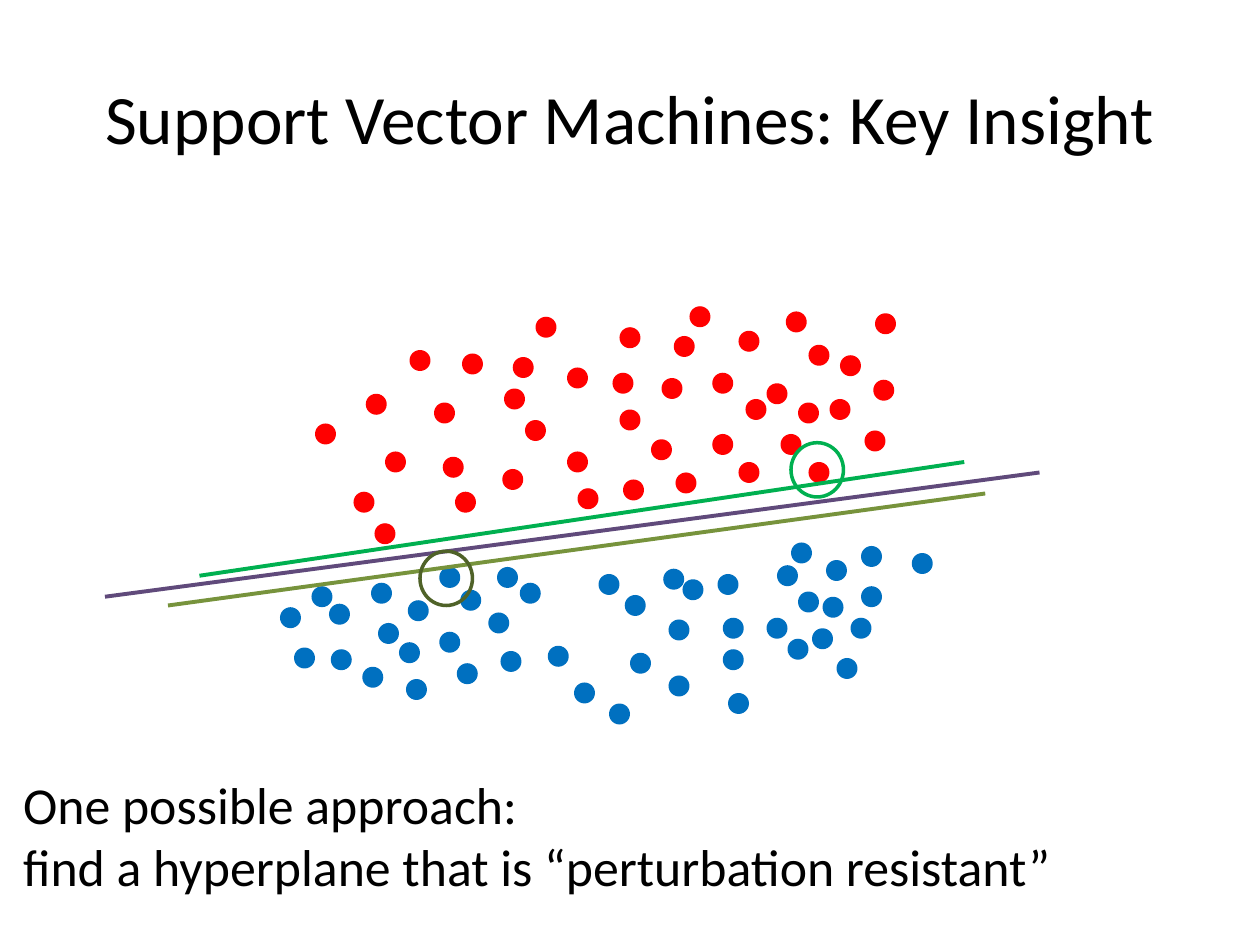
from dataclasses import dataclass

from lxml.etree import SubElement
from pptx import Presentation
from pptx.dml.color import RGBColor
from pptx.enum.shapes import MSO_CONNECTOR as Connector, MSO_SHAPE as Shape
from pptx.enum.text import MSO_ANCHOR as Anchor, MSO_AUTO_SIZE as AutoSize, PP_ALIGN as Align
from pptx.oxml.ns import qn
from pptx.util import Pt


@dataclass(frozen=True)
class Theme:
    font: str = "Calibri"
    text: str = "000000"
    title_size: float = 39.6
    body_size: float = 29.6
    positive: str = "FF0000"
    negative: str = "0070C0"
    upper_margin: str = "00B050"
    lower_margin: str = "77933C"
    separator: str = "604A7B"
    lower_ring: str = "4F6228"
    line_width: float = 2.25
    ring_width: float = 2


THEME = Theme()
DOT_SIZE = 12
RING_SIZE = (30, 31)

TITLE_BOX = (36, 21.6, 648, 90)
PLOT_BOX = (36, 144, 648, 288)
BODY_BOX = (6, 438, 648, 90)

POSITIVE_POINTS = [
    (228, 58), (318, 90), (386, 45), (288, 66), (270, 37), (390, 84), (264, 96),
    (350, 126), (358, 31), (252, 78), (251, 124), (178, 155), (318, 43), (349, 48),
    (198, 56), (371, 104), (212, 86), (314, 69), (288, 114), (458, 102), (386, 120),
    (320, 130), (463, 73), (342, 72), (402, 75), (413, 34), (336, 107), (438, 84),
    (224, 137), (426, 53), (173, 81), (144, 98), (426, 120), (371, 69), (294, 135),
    (184, 114), (217, 117), (420, 86), (464, 35), (257, 60), (166, 137), (410, 104),
    (444, 59),
]
NEGATIVE_POINTS = [
    (277, 225), (243, 206), (215, 217), (402, 209), (456, 168), (436, 176), (324, 229),
    (354, 187), (227, 193), (132, 226), (377, 227), (171, 237), (416, 166), (343, 181),
    (420, 194), (321, 196), (434, 197), (414, 221), (142, 191), (377, 209), (180, 212),
    (450, 209), (215, 180), (196, 244), (261, 189), (408, 179), (176, 189), (456, 191),
    (346, 210), (197, 199), (225, 235), (248, 180), (428, 215), (380, 252), (192, 223),
    (312, 258), (374, 184), (250, 228), (124, 203), (346, 242), (292, 246), (152, 201),
    (442, 232), (306, 184), (485, 172), (153, 227),
]
HYPERPLANES = [
    ((515, 120), (78, 185), THEME.upper_margin),
    ((527, 138), (60, 202), THEME.lower_margin),
    ((558, 126), (24, 197), THEME.separator),
]
SUPPORT_RINGS = [
    ((416, 109), THEME.upper_margin),
    ((204, 171), THEME.lower_ring),
]


def color(value):
    return RGBColor.from_string(value)


def fill_placeholder(holder, box, text, size, anchor, align):
    holder.left, holder.top, holder.width, holder.height = map(Pt, box)
    frame = holder.text_frame
    frame.text = text
    frame.word_wrap = True
    frame.auto_size = AutoSize.NONE
    frame.vertical_anchor = anchor
    para = frame.paragraphs[0]
    para.alignment = align
    for span in para.runs:
        span.font.name = THEME.font
        span.font.size = Pt(size)
        span.font.color.rgb = color(THEME.text)
    return para


def add_title(page, box):
    fill_placeholder(page.shapes.title, box, "Support Vector Machines: Key Insight",
                     THEME.title_size, Anchor.MIDDLE, Align.CENTER)


def add_approach(page, box):
    text = "One possible approach: \vfind a hyperplane that is “perturbation resistant”"
    para = fill_placeholder(page.placeholders[1], box, text,
                            THEME.body_size, Anchor.TOP, Align.LEFT)
    para.space_before = Pt(0.2 * THEME.body_size)
    settings = para._p.get_or_add_pPr()
    settings.set("marL", "0")
    settings.set("indent", "0")
    SubElement(settings, qn("a:buNone"))


def add_ellipse(page, left, top, width, height):
    ellipse = page.shapes.add_shape(Shape.OVAL, Pt(left), Pt(top), Pt(width), Pt(height))
    ellipse.shadow.inherit = False
    return ellipse


def add_dots(page, box, points, tint):
    for x, y in points:
        dot = add_ellipse(page, box[0] + x, box[1] + y, DOT_SIZE, DOT_SIZE)
        dot.fill.solid()
        dot.fill.fore_color.rgb = color(tint)
        dot.line.fill.background()


def add_hyperplane(page, box, start, end, tint):
    left, top = box[:2]
    line = page.shapes.add_connector(
        Connector.STRAIGHT, Pt(left + start[0]), Pt(top + start[1]),
        Pt(left + end[0]), Pt(top + end[1]))
    line.line.color.rgb = color(tint)
    line.line.width = Pt(THEME.line_width)
    SubElement(line._element.spPr, qn("a:effectLst"))


def add_ring(page, box, corner, tint):
    ring = add_ellipse(page, box[0] + corner[0], box[1] + corner[1], *RING_SIZE)
    ring.fill.background()
    ring.line.color.rgb = color(tint)
    ring.line.width = Pt(THEME.ring_width)


def add_scatter(page, box):
    add_dots(page, box, POSITIVE_POINTS, THEME.positive)
    add_dots(page, box, NEGATIVE_POINTS, THEME.negative)
    for start, end, tint in HYPERPLANES:
        add_hyperplane(page, box, start, end, tint)
    for corner, tint in SUPPORT_RINGS:
        add_ring(page, box, corner, tint)


def main():
    deck = Presentation()
    deck.slide_width, deck.slide_height = Pt(720), Pt(540)
    page = deck.slides.add_slide(deck.slide_layouts[1])
    add_title(page, TITLE_BOX)
    add_scatter(page, PLOT_BOX)
    add_approach(page, BODY_BOX)
    deck.save("out.pptx")


if __name__ == "__main__":
    main()
